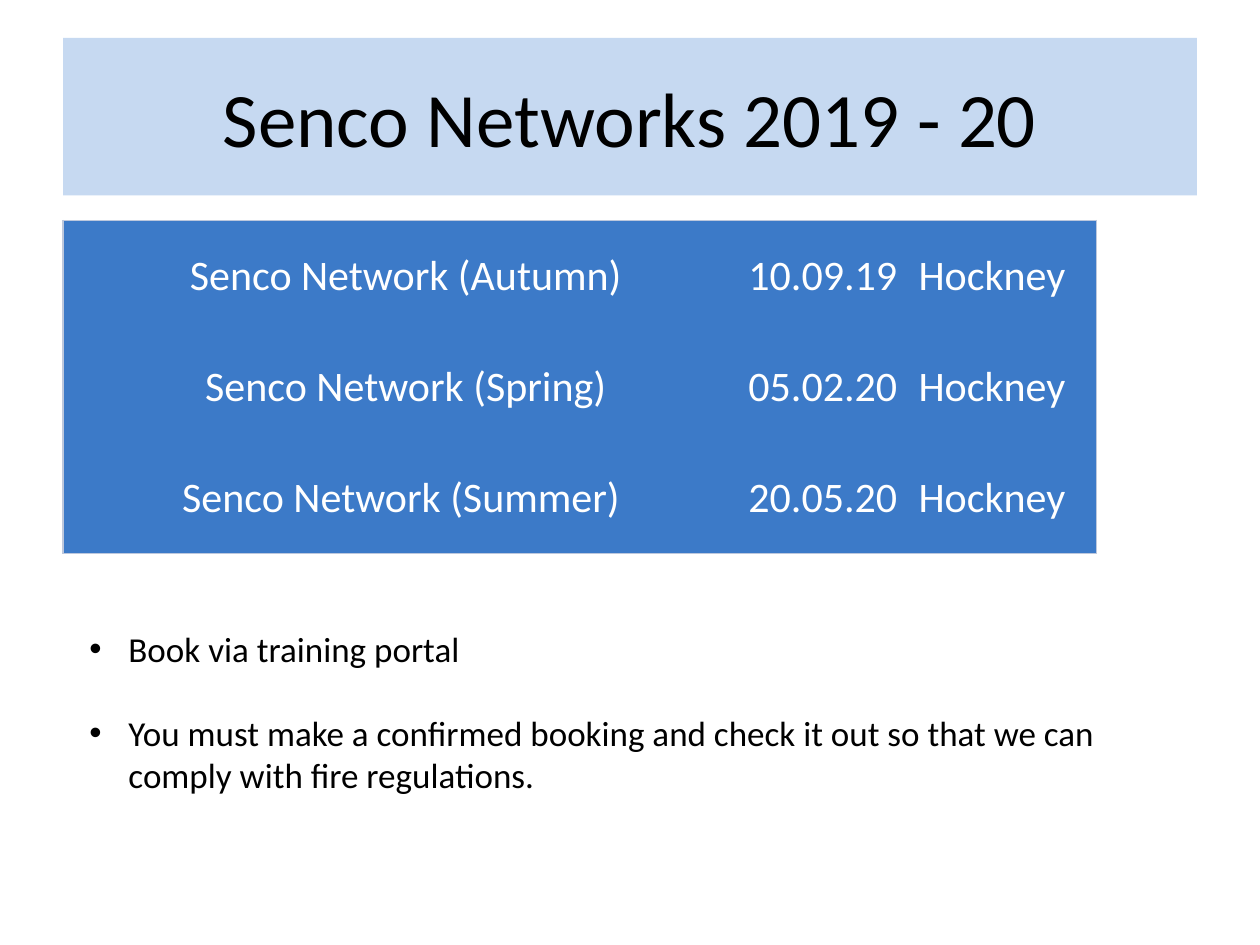
from lxml import etree
from pptx import Presentation
from pptx.dml.color import RGBColor
from pptx.enum.text import MSO_ANCHOR, PP_ALIGN
from pptx.oxml.ns import qn
from pptx.util import Inches, Pt

LEFT, CENTER = PP_ALIGN.LEFT, PP_ALIGN.CENTER
TOP, MIDDLE = MSO_ANCHOR.TOP, MSO_ANCHOR.MIDDLE

FONT = "Calibri"
BLACK = RGBColor(0x00, 0x00, 0x00)
WHITE = RGBColor(0xFF, 0xFF, 0xFF)
PALE_BLUE = RGBColor(0xC6, 0xD9, 0xF1)
TABLE_BLUE = RGBColor(0x3C, 0x7A, 0xC8)
BORDER = RGBColor(0xBD, 0xC8, 0xDD)

TITLE = "Senco Networks 2019 - 20"
MEETINGS = [
    ("Senco Network (Autumn)", "10.09.19", "Hockney"),
    ("Senco Network (Spring)", "05.02.20", "Hockney"),
    ("Senco Network (Summer) ", "20.05.20", "Hockney"),
]
COLUMN_WIDTHS = [5.44, 1.35, 1.41]
ROW_HEIGHT = 0.88
BOOKING_NOTES = [
    "Book via training portal",
    "You must make a confirmed booking and check it out so that we can "
    "comply with fire regulations.",
]


def write_text(paragraph, text, size, color=BLACK, align=LEFT, space_before=0):
    paragraph.text = text
    paragraph.alignment = align
    paragraph.space_before = Pt(space_before)
    font = paragraph.font
    font.name = FONT
    font.size = Pt(size)
    font.color.rgb = color


def place(shape, left, top, width, height):
    shape.left, shape.top = Inches(left), Inches(top)
    shape.width, shape.height = Inches(width), Inches(height)


def add_bullet(paragraph, indent):
    properties = paragraph._p.get_or_add_pPr()
    properties.set("marL", str(Inches(indent)))
    properties.set("indent", str(-Inches(indent)))
    etree.SubElement(properties, qn("a:buFont"), typeface="Arial")
    etree.SubElement(properties, qn("a:buChar"), char="•")


def set_borders(cell, visible_edges):
    """Draw the named edges (L, R, T, B) and clear the others."""
    properties = cell._tc.get_or_add_tcPr()
    for edge in "LRTB":
        line = etree.SubElement(properties, qn(f"a:ln{edge}"), w=str(Pt(0.75)))
        if edge in visible_edges:
            fill = etree.SubElement(line, qn("a:solidFill"))
            etree.SubElement(fill, qn("a:srgbClr"), val=str(BORDER))
        else:
            etree.SubElement(line, qn("a:noFill"))


def format_title(title):
    place(title, 0.5, 0.3, 9, 1.25)
    title.fill.solid()
    title.fill.fore_color.rgb = PALE_BLUE
    title.text_frame.vertical_anchor = MIDDLE
    write_text(title.text_frame.paragraphs[0], TITLE, 44, align=CENTER)


def add_meeting_table(slide):
    row_count, column_count = len(MEETINGS), len(COLUMN_WIDTHS)
    table = slide.shapes.add_table(
        row_count, column_count, Inches(0.5), Inches(1.75),
        Inches(sum(COLUMN_WIDTHS)), Inches(ROW_HEIGHT * row_count)).table
    for column, width in zip(table.columns, COLUMN_WIDTHS):
        column.width = Inches(width)
    for row_index, meeting in enumerate(MEETINGS):
        table.rows[row_index].height = Inches(ROW_HEIGHT)
        for column_index, text in enumerate(meeting):
            cell = table.cell(row_index, column_index)
            # Only the outer frame of the table is drawn
            outer_edges = {"L": column_index == 0,
                           "R": column_index == column_count - 1,
                           "T": row_index == 0,
                           "B": row_index == row_count - 1}
            set_borders(cell, [edge for edge, outer in outer_edges.items() if outer])
            cell.fill.solid()
            cell.fill.fore_color.rgb = TABLE_BLUE
            cell.margin_left = cell.margin_right = cell.margin_bottom = 0
            cell.margin_top = Inches(0.01)
            cell.vertical_anchor = MIDDLE
            write_text(cell.text_frame.paragraphs[0], text, 24, color=WHITE,
                       align=CENTER if column_index == 0 else LEFT)
            cell.text_frame.paragraphs[0].font.bold = False


def format_notes(body):
    place(body, 0.61, 4.93, 8.41, 1.45)
    frame = body.text_frame
    frame.vertical_anchor = TOP
    for index, note in enumerate(BOOKING_NOTES):
        paragraph = frame.add_paragraph() if index else frame.paragraphs[0]
        paragraph.space_before = Pt(0)
        add_bullet(paragraph, 0.31)
        write_text(paragraph, note, 20, space_before=24 if index else 0)


def main():
    presentation = Presentation()
    presentation.slide_width = Inches(10)
    presentation.slide_height = Inches(7.5)
    slide = presentation.slides.add_slide(presentation.slide_layouts[1])

    # Title band, meeting dates, booking notes
    format_title(slide.shapes.title)
    add_meeting_table(slide)
    format_notes(slide.placeholders[1])

    presentation.save("out.pptx")


if __name__ == "__main__":
    main()
